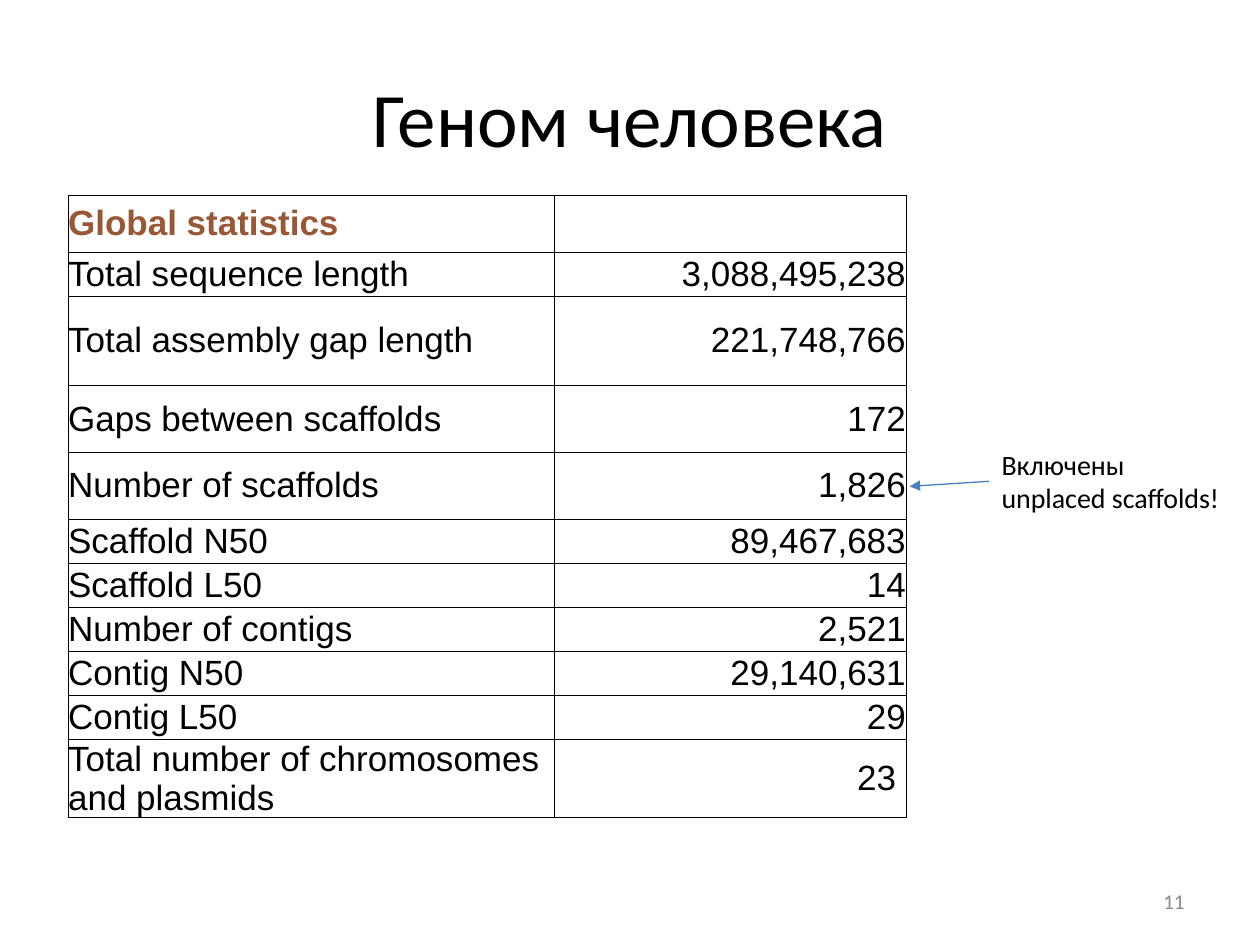
from lxml import etree
from pptx import Presentation
from pptx.dml.color import RGBColor
from pptx.enum.shapes import MSO_CONNECTOR
from pptx.enum.text import MSO_ANCHOR, PP_ALIGN
from pptx.oxml.ns import qn
from pptx.util import Inches, Pt

LEFT, CENTER, RIGHT = PP_ALIGN.LEFT, PP_ALIGN.CENTER, PP_ALIGN.RIGHT
TOP, MIDDLE = MSO_ANCHOR.TOP, MSO_ANCHOR.MIDDLE
STRAIGHT = MSO_CONNECTOR.STRAIGHT

COLORS = {
    "black": "000000",
    "header": "985735",
    "number": "898989",
    "arrow": "4B7EBC",
}

LABELS = [
    ("Геном человека", (0.5, 0.3, 9, 1.25), MIDDLE, CENTER,
     {"size": Pt(44), "name": "Calibri"}, "black"),
    ("11", (7.17, 6.95, 2.33, 0.4), MIDDLE, RIGHT,
     {"size": Pt(12), "name": "Calibri"}, "number"),
    ("Включены unplaced scaffolds!", (7.85, 3.5, 1.95, 0.64), TOP, LEFT,
     {"size": Pt(16), "name": "Calibri"}, "black"),
]

STATISTICS = [
    ("Global statistics", "", 0.45),
    ("Total sequence length", "3,088,495,238", 0.35),
    ("Total assembly gap length", "221,748,766", 0.71),
    ("Gaps between scaffolds", "172", 0.53),
    ("Number of scaffolds", "1,826", 0.53),
    ("Scaffold N50", "89,467,683", 0.35),
    ("Scaffold L50", "14", 0.35),
    ("Number of contigs", "2,521", 0.35),
    ("Contig N50", "29,140,631", 0.35),
    ("Contig L50", "29", 0.35),
    ("Total number of chromosomes and plasmids", "23 ", 0.62),
]
TABLE_LEFT, TABLE_TOP = 0.54, 1.55
COLUMN_WIDTHS = (3.86, 2.79)
ARROW = (7.85, 3.82, 7.22, 3.86)


def write(frame, text, align, font, color):
    para = frame.paragraphs[0]
    para.alignment = align
    span = para.add_run()
    span.text = text
    for key, value in font.items():
        setattr(span.font, key, value)
    span.font.color.rgb = RGBColor.from_string(COLORS[color])


def add_label(page, text, place, anchor, align, font, color):
    frame = page.shapes.add_textbox(*map(Inches, place)).text_frame
    frame.word_wrap = True
    frame.vertical_anchor = anchor
    write(frame, text, align, font, color)


def add_borders(cell):
    properties = cell._tc.get_or_add_tcPr()
    for position, side in enumerate(("lnL", "lnR", "lnT", "lnB")):
        line = etree.Element(qn(f"a:{side}"), w=str(Pt(0.5)))
        fill = etree.SubElement(line, qn("a:solidFill"))
        etree.SubElement(fill, qn("a:srgbClr"), val=COLORS["black"])
        properties.insert(position, line)


def add_statistics(page):
    heights = [height for _, _, height in STATISTICS]
    size = (sum(COLUMN_WIDTHS), sum(heights))
    table = page.shapes.add_table(
        len(STATISTICS), len(COLUMN_WIDTHS),
        *map(Inches, (TABLE_LEFT, TABLE_TOP, *size))).table
    table.first_row = table.horz_banding = False
    for column, width in zip(table.columns, COLUMN_WIDTHS):
        column.width = Inches(width)
    for index, (label, value, height) in enumerate(STATISTICS):
        table.rows[index].height = Inches(height)
        is_header = index == 0
        font = {"size": Pt(20), "name": "Arial", "bold": is_header}
        color = "header" if is_header else "black"
        for cell, text, align in zip(table.rows[index].cells, (label, value), (LEFT, RIGHT)):
            cell.fill.background()
            add_borders(cell)
            cell.vertical_anchor = MIDDLE
            for side in ("left", "right", "top", "bottom"):
                setattr(cell, f"margin_{side}", 0)
            if text:
                write(cell.text_frame, text, align, font, color)


def add_arrow(page):
    arrow = page.shapes.add_connector(STRAIGHT, *map(Inches, ARROW))
    arrow.line.color.rgb = RGBColor.from_string(COLORS["arrow"])
    arrow.line.width = Pt(0.75)
    etree.SubElement(arrow.line._get_or_add_ln(), qn("a:tailEnd"), type="triangle")
    etree.SubElement(arrow._element.spPr, qn("a:effectLst"))


def main():
    deck = Presentation()
    deck.slide_width, deck.slide_height = Inches(10), Inches(7.5)
    page = deck.slides.add_slide(deck.slide_layouts[6])
    add_statistics(page)
    for label in LABELS:
        add_label(page, *label)
    add_arrow(page)
    deck.save("out.pptx")


if __name__ == "__main__":
    main()
